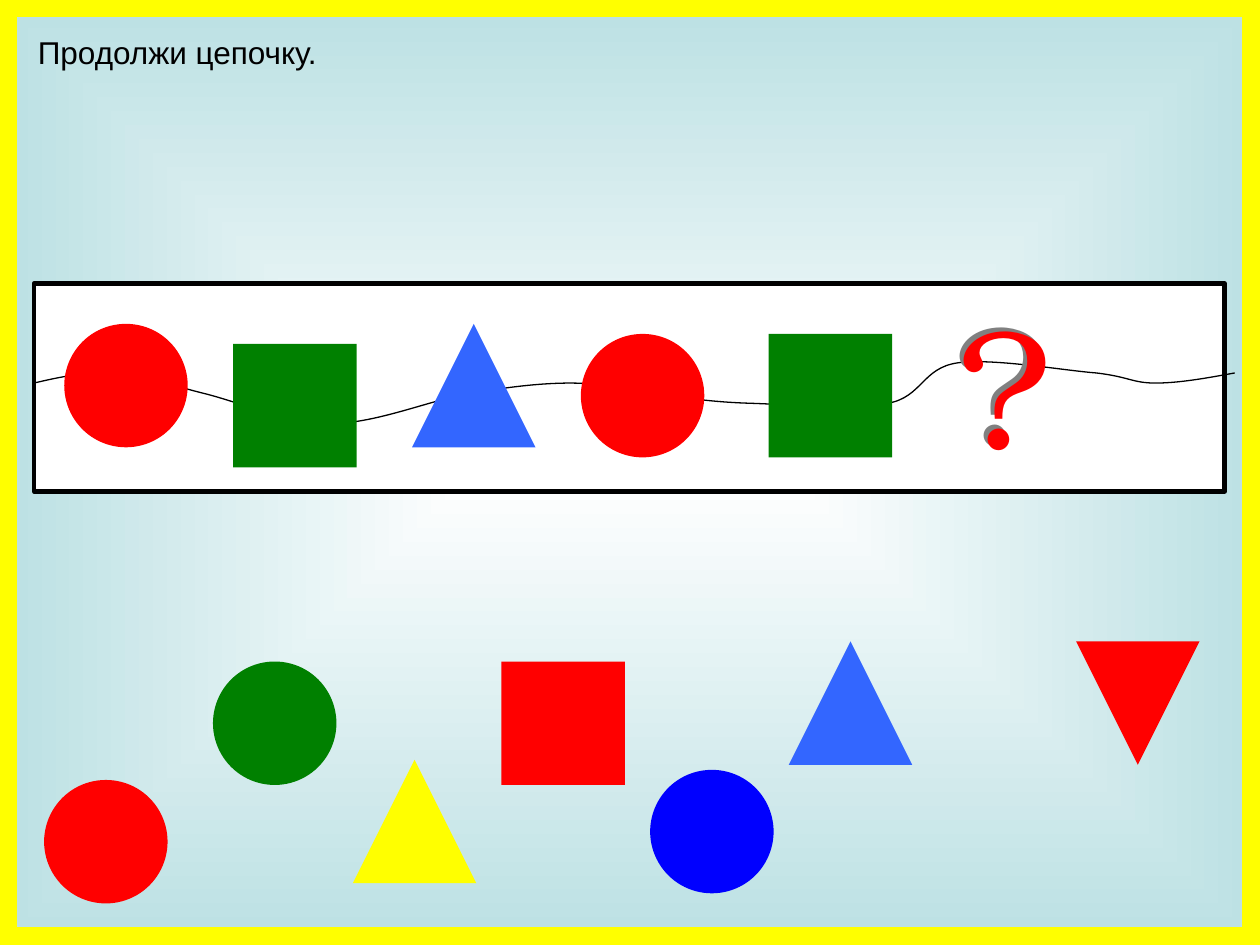
from lxml.etree import SubElement
from pptx import Presentation
from pptx.dml.color import RGBColor
from pptx.enum.shapes import MSO_SHAPE
from pptx.enum.text import MSO_ANCHOR, MSO_AUTO_SIZE, PP_ALIGN
from pptx.oxml.ns import qn
from pptx.util import Inches, Pt

COLORS = {
    "white": "FFFFFF", "black": "000000", "gray": "808080", "mist": "BBE0E3",
    "red": "FF0000", "green": "008000", "sky": "3366FF", "blue": "0000FF",
    "yellow": "FFFF00",
}
CIRCLE, SQUARE, TRIANGLE = MSO_SHAPE.OVAL, MSO_SHAPE.RECTANGLE, MSO_SHAPE.ISOSCELES_TRIANGLE
FIGURE_SIZE = 0.98

CHAIN = [
    (CIRCLE, 0.51, 2.57, "red"),
    (SQUARE, 1.85, 2.73, "green"),
    (TRIANGLE, 3.27, 2.57, "sky"),
    (CIRCLE, 4.61, 2.65, "red"),
    (SQUARE, 6.1, 2.65, "green"),
]
CHOICES = [
    (CIRCLE, 0.35, 6.19, "red"),
    (TRIANGLE, 6.26, 5.09, "sky"),
    (CIRCLE, 1.69, 5.25, "green"),
    (SQUARE, 3.98, 5.25, "red"),
    (TRIANGLE, 2.8, 6.03, "yellow"),
    (CIRCLE, 5.16, 6.11, "blue"),
]
THREAD = [
    (0.27, 3.04),
    (0.48, 2.99), (0.68, 2.95), (0.9, 2.96),
    (1.13, 2.97), (1.33, 3.05), (1.61, 3.12),
    (1.9, 3.19), (2.28, 3.36), (2.64, 3.36),
    (2.99, 3.36), (3.43, 3.17), (3.74, 3.12),
    (4.05, 3.07), (4.29, 3.04), (4.53, 3.04),
    (4.76, 3.04), (4.92, 3.09), (5.16, 3.12),
    (5.39, 3.15), (5.63, 3.19), (5.94, 3.2),
    (6.26, 3.21), (6.77, 3.25), (7.05, 3.2),
    (7.32, 3.15), (7.32, 2.92), (7.6, 2.88),
    (7.88, 2.84), (8.44, 2.94), (8.7, 2.96),
    (8.96, 2.99), (8.99, 3.04), (9.17, 3.04),
    (9.36, 3.04), (9.58, 3.0), (9.8, 2.96),
]


def rgb(name):
    return RGBColor.from_string(COLORS[name])


class SlideBuilder:
    def __init__(self, slide):
        self.s = slide

    def background(self, center, edge):
        fill = self.s.background.fill
        fill.gradient()
        for stop, color in zip(fill.gradient_stops, (center, edge)):
            stop.color.rgb = rgb(color)
        grad = self.s.element.find(".//" + qn("a:gradFill"))
        grad.remove(grad.find(qn("a:lin")))
        shade = SubElement(grad, qn("a:path"), path="shape")
        SubElement(shade, qn("a:fillToRect"), l="50000", t="50000", r="50000", b="50000")

    def style(self, sp, fill=None, line=None, width=0.75):
        sp.shadow.inherit = False
        if fill:
            sp.fill.solid()
            sp.fill.fore_color.rgb = rgb(fill)
        else:
            sp.fill.background()
        if line:
            sp.line.color.rgb = rgb(line)
            sp.line.width = Pt(width)
        else:
            sp.line.fill.background()

    def shape(self, kind, x, y, w, h, **style):
        sp = self.s.shapes.add_shape(kind, Inches(x), Inches(y), Inches(w), Inches(h))
        self.style(sp, **style)
        return sp

    def figure(self, kind, x, y, color):
        return self.shape(kind, x, y, FIGURE_SIZE, FIGURE_SIZE, fill=color)

    def curve(self, points, color):
        start, *rest = [(Inches(x), Inches(y)) for x, y in points]
        builder = self.s.shapes.build_freeform(*start)
        builder.add_line_segments(rest, close=False)
        sp = builder.convert_to_shape()
        self.style(sp, line=color)
        segments = sp.element.findall(".//" + qn("a:lnTo"))
        outline = segments[0].getparent()
        for i in range(0, len(segments), 3):
            bezier = SubElement(outline, qn("a:cubicBezTo"))
            for segment in segments[i:i + 3]:
                bezier.append(segment[0])
                outline.remove(segment)

    def text(self, sp, text, x, y, w, h, size, font, color):
        sp.left, sp.top, sp.width, sp.height = map(Inches, (x, y, w, h))
        tf = sp.text_frame
        tf.text = text
        tf.word_wrap = True
        tf.auto_size = MSO_AUTO_SIZE.SHAPE_TO_FIT_TEXT
        tf.vertical_anchor = MSO_ANCHOR.TOP
        p = tf.paragraphs[0]
        p.alignment = PP_ALIGN.LEFT
        r = p.runs[0]
        r.font.size = Pt(size)
        r.font.name = font
        r.font.color.rgb = rgb(color)

    def title(self, *args):
        self.text(self.s.shapes.title, *args)

    def shadowed_text(self, *args):
        sp = self.s.shapes.add_textbox(0, 0, 0, 0)
        self.text(sp, *args)
        effects = SubElement(sp.element.spPr, qn("a:effectLst"))
        shadow = SubElement(effects, qn("a:outerShdw"), dist="45720", dir="13500000",
                            algn="ctr", rotWithShape="0")
        SubElement(shadow, qn("a:srgbClr"), val=COLORS["gray"])


def main():
    prs = Presentation()
    prs.slide_width, prs.slide_height = Inches(10), Inches(7.5)
    b = SlideBuilder(prs.slides.add_slide(prs.slide_layouts[5]))
    b.background("white", "mist")
    b.shape(SQUARE, 0.27, 2.25, 9.45, 1.65, fill="white", line="black", width=2.5)
    b.shape(SQUARE, 0, 0, 10, 7.5, line="yellow", width=20)
    b.title("Продолжи цепочку.", 0.2, 0.21, 2.68, 0.4, 18, "Arial", "black")
    b.curve(THREAD, "black")
    for item in CHAIN:
        b.figure(*item)
    b.shadowed_text("?", 7.52, 2.18, 1.18, 1.7, 96, "TeX Gyre Bonum", "red")
    for item in CHOICES:
        b.figure(*item)
    b.figure(TRIANGLE, 8.54, 5.09, "red").rotation = 180
    prs.save("out.pptx")


if __name__ == "__main__":
    main()
